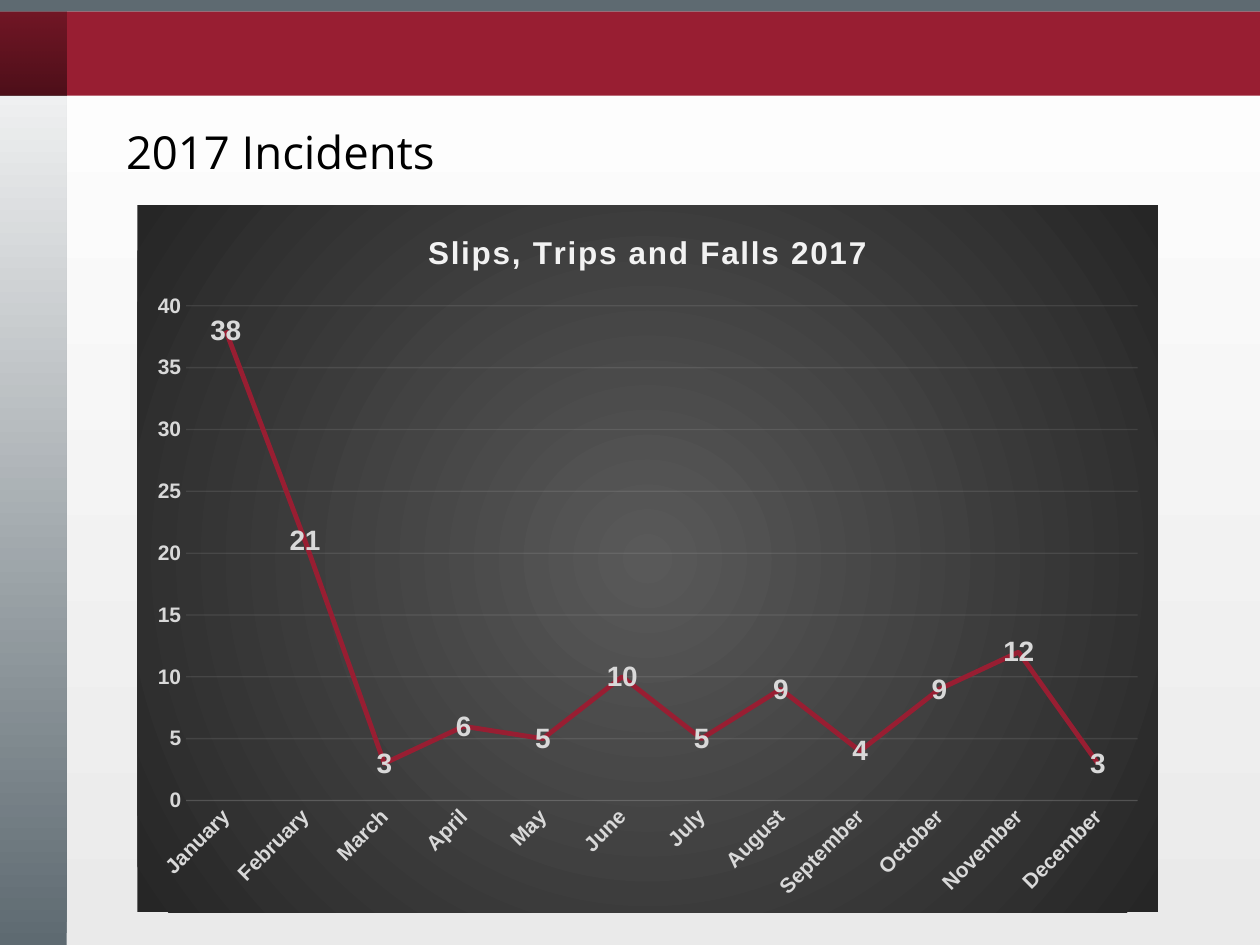
import pptx
import pptx.chart.data
import pptx.dml.color
import pptx.enum.chart
import pptx.enum.shapes
import pptx.enum.text
import pptx.oxml
import pptx.oxml.ns
import pptx.util

Inches, Pt = pptx.util.Inches, pptx.util.Pt
RGB = pptx.dml.color.RGBColor
qn = pptx.oxml.ns.qn

BLACK = RGB(0, 0, 0)
WHITE = RGB(0xFF, 0xFF, 0xFF)
PALE = RGB(0xEA, 0xEA, 0xEA)
SLATE = RGB(0x5E, 0x6A, 0x71)
RED = RGB(0x98, 0x1E, 0x32)
MIST = RGB(0xF2, 0xF2, 0xF2)
SILVER = RGB(0xD9, 0xD9, 0xD9)
ASH = RGB(0x59, 0x59, 0x59)
COAL = RGB(0x26, 0x26, 0x26)

HEAD = "2017 Incidents"
NAME = "Slips, Trips and Falls 2017"
COUNTS = {
    "January": 38, "February": 21, "March": 3, "April": 6,
    "May": 5, "June": 10, "July": 5, "August": 9,
    "September": 4, "October": 9, "November": 12, "December": 3,
}
BANDS = [
    ((0, 0, 0.53, 7.5), (SLATE, WHITE), None),
    ((0, 0.09, 10, 0.67), (RED,), None),
    ((-0.02, 0.09, 0.55, 0.67), (BLACK, BLACK), (50, 25)),
    ((-0.02, 0, 10.02, 0.09), (SLATE,), None),
]


def fade(root, alphas):
    for node, alpha in zip(root.iter(qn("a:srgbClr")), alphas):
        node.append(pptx.oxml.parse_xml(
            f'<a:alpha {pptx.oxml.ns.nsdecls("a")} val="{alpha * 1000}"/>'))


def paint(fill, tones):
    if len(tones) == 1:
        fill.solid()
        fill.fore_color.rgb = tones[0]
        return
    fill.gradient()
    fill.gradient_angle = 90
    for stop, tone in zip(fill.gradient_stops, tones):
        stop.color.rgb = tone


def style(font, size, color, face="Arial", bold=True):
    font.name, font.size, font.bold = face, Pt(size), bold
    font.color.rgb = color


def rule(line):
    line.width = Pt(0.75)
    line.color.rgb = MIST
    fade(line.format_node if hasattr(line, "format_node") else line._ln, [10])


def add_bands(slide):
    for box, tones, alphas in BANDS:
        band = slide.shapes.add_shape(
            pptx.enum.shapes.MSO_SHAPE.RECTANGLE, *map(Inches, box))
        band.shadow.inherit = False
        band.line.fill.background()
        paint(band.fill, tones)
        if alphas:
            fade(band._element.spPr, alphas)


def set_title(title):
    title.left, title.top, title.width, title.height = map(
        Inches, (0.72, 0.93, 3.22, 0.54))
    frame = title.text_frame
    frame.word_wrap = False
    frame.margin_left = Inches(0.28)
    frame.vertical_anchor = pptx.enum.text.MSO_ANCHOR.MIDDLE
    para = frame.paragraphs[0]
    para.alignment = pptx.enum.text.PP_ALIGN.LEFT
    run = para.add_run()
    run.text = HEAD
    style(run.font, 26, BLACK, "Open Sans", False)


def add_graph(slide):
    data = pptx.chart.data.CategoryChartData()
    data.categories = list(COUNTS)
    data.add_series("Series 1", list(COUNTS.values()))
    kinds = pptx.enum.chart
    chart = slide.shapes.add_chart(
        kinds.XL_CHART_TYPE.LINE, *map(Inches, (1.09, 1.63, 8.1, 5.61)), data).chart
    chart.has_legend = False
    style(chart.font, 10, WHITE, bold=False)

    stops = "".join(
        f'<a:gs pos="{pos}"><a:srgbClr val="{tone}"/></a:gs>'
        for pos, tone in ((0, ASH), (100000, COAL)))
    back = pptx.oxml.parse_xml(
        f'<c:spPr {pptx.oxml.ns.nsdecls("c", "a")}><a:gradFill><a:gsLst>{stops}</a:gsLst>'
        '<a:path path="circle"><a:fillToRect l="50000" t="50000" r="50000" b="50000"/>'
        '</a:path></a:gradFill><a:ln><a:noFill/></a:ln></c:spPr>')
    chart._chartSpace.find(qn("c:txPr")).addprevious(back)

    chart.has_title = True
    chart.chart_title.include_in_layout = False
    run = chart.chart_title.text_frame.paragraphs[0].add_run()
    run.text = NAME
    style(run.font, 18, MIST)
    run.font._element.set("spc", "100")

    months, scale = chart.category_axis, chart.value_axis
    for axis in (months, scale):
        axis.major_tick_mark = axis.minor_tick_mark = kinds.XL_TICK_MARK.NONE
        style(axis.tick_labels.font, 12, SILVER)
    months._element.find(qn("c:txPr")).find(qn("a:bodyPr")).set("rot", "-2700000")
    scale.minimum_scale, scale.maximum_scale, scale.major_unit = 0, 40, 5
    scale.format.line.fill.background()
    scale.has_major_gridlines = True
    rule(months.format.line)
    rule(scale.major_gridlines.format.line)

    plot = chart.plots[0]
    plot.vary_by_categories = False
    series = plot.series[0]
    series.smooth = False
    series.marker.style = kinds.XL_MARKER_STYLE.NONE
    series.format.line.color.rgb = RED
    series.format.line.width = Pt(2.75)
    labels = series.data_labels
    labels.show_value = True
    labels.position = kinds.XL_LABEL_POSITION.CENTER
    style(labels.font, 16, SILVER)


def main():
    deck = pptx.Presentation()
    deck.slide_width, deck.slide_height = Inches(10), Inches(7.5)
    slide = deck.slides.add_slide(deck.slide_layouts[5])
    paint(slide.background.fill, (PALE, WHITE))
    add_bands(slide)
    set_title(slide.shapes.title)
    add_graph(slide)
    deck.save("out.pptx")


if __name__ == "__main__":
    main()
